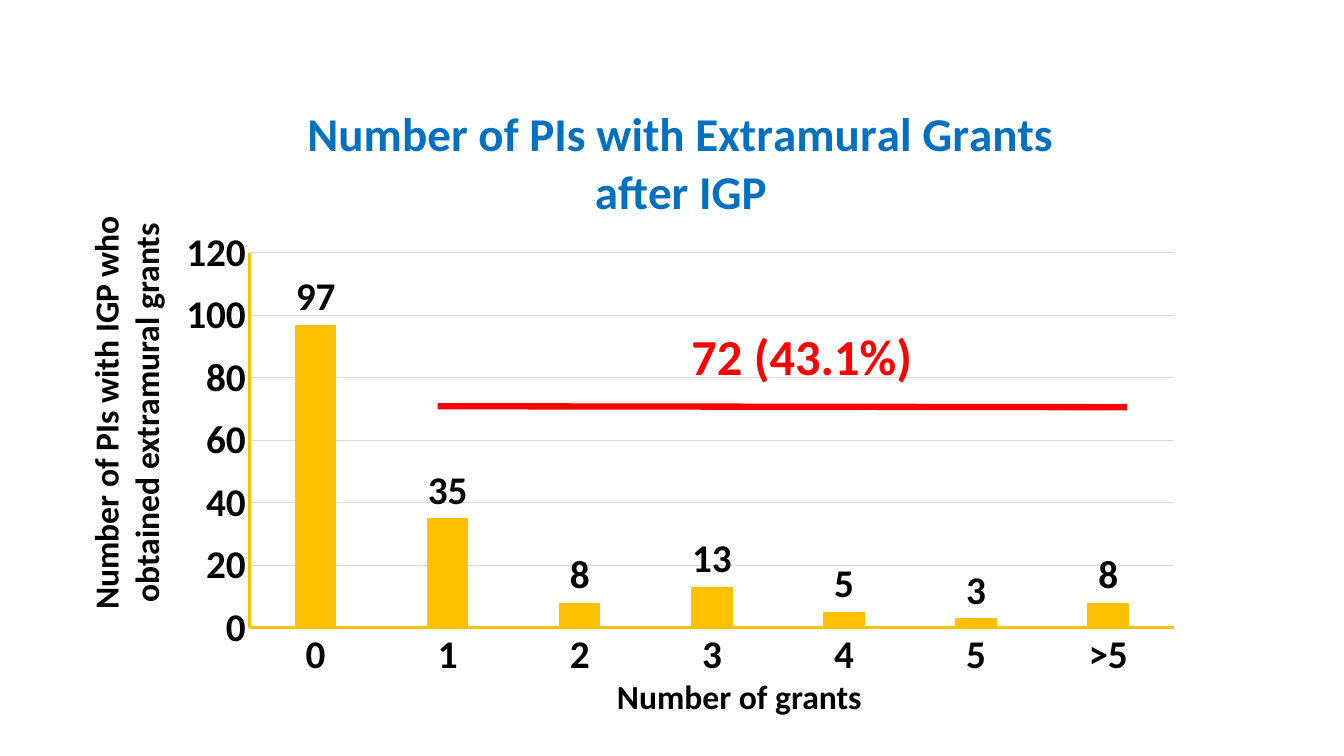
from dataclasses import dataclass

from lxml.etree import SubElement
from pptx import Presentation
from pptx.chart.data import CategoryChartData
from pptx.dml.color import RGBColor
from pptx.enum.chart import XL_CHART_TYPE, XL_LABEL_POSITION, XL_TICK_MARK
from pptx.enum.shapes import MSO_CONNECTOR
from pptx.enum.text import MSO_AUTO_SIZE, PP_ALIGN
from pptx.oxml import parse_xml
from pptx.oxml.ns import nsdecls, qn
from pptx.util import Inches, Pt

GOLD = RGBColor(0xFF, 0xC0, 0x00)
RED = RGBColor(0xFF, 0x00, 0x00)
BLUE = RGBColor(0x00, 0x70, 0xC0)
BLACK = RGBColor(0x00, 0x00, 0x00)
GRAY = RGBColor(0xD9, 0xD9, 0xD9)

GRANTS = {"0": 97, "1": 35, "2": 8, "3": 13, "4": 5, "5": 3, ">5": 8}
TITLE = "Number of PIs with Extramural Grants after IGP"
PLOT = {"x": 0.08, "y": 0.29, "w": 0.9, "h": 0.61}


@dataclass
class Label:
    text: str
    left: float
    top: float
    width: float
    height: float
    size: float = 24
    color: RGBColor = BLACK
    turn: float = 0
    wrap: bool = False


LABELS = [
    Label("72 (43.1%)", 6.76, 3.18, 2.41, 0.71, size=36, color=RED),
    Label("Number of grants", 6.02, 6.66, 2.65, 0.5),
    Label("Number of PIs with IGP who obtained extramural grants",
          -1.32, 3.64, 5.14, 0.91, turn=270, wrap=True),
]


def apply(item, values: dict) -> None:
    for name, value in values.items():
        setattr(item, name, value)


def style(font, size: float, color: RGBColor) -> None:
    apply(font, {"name": "Calibri", "size": Pt(size), "bold": True})
    font.color.rgb = color


def stroke(line, color: RGBColor, width: float) -> None:
    line.color.rgb = color
    line.width = Pt(width)


def place(chart) -> None:
    """Fix the inner plot area as fractions of the chart."""
    area = chart.plots[0]._element.getparent()
    for old in area.findall(qn("c:layout")):
        area.remove(old)
    layout = parse_xml(f"<c:layout {nsdecls('c')}/>")
    box = SubElement(layout, qn("c:manualLayout"))
    parts = {"layoutTarget": "inner", "xMode": "edge", "yMode": "edge", **PLOT}
    for tag, value in parts.items():
        SubElement(box, qn(f"c:{tag}")).set("val", str(value))
    area.insert(0, layout)


def add_bars(slide) -> None:
    data = CategoryChartData()
    data.categories = list(GRANTS)
    data.add_series("Series 1", list(GRANTS.values()))
    chart = slide.shapes.add_chart(
        XL_CHART_TYPE.COLUMN_CLUSTERED, Inches(1.66), Inches(0.74),
        Inches(10.19), Inches(6.1), data).chart
    chart.has_legend = False
    style(chart.font, 28, BLACK)

    # Title
    frame = chart.chart_title.text_frame
    frame.text = TITLE
    style(frame.paragraphs[0].runs[0].font, 33.6, BLUE)
    chart.chart_title.include_in_layout = False

    # Axes
    for axis in (chart.category_axis, chart.value_axis):
        apply(axis, {"major_tick_mark": XL_TICK_MARK.NONE,
                     "minor_tick_mark": XL_TICK_MARK.NONE})
        style(axis.tick_labels.font, 28, BLACK)
        stroke(axis.format.line, GOLD, 2.25)
    apply(chart.value_axis, {"minimum_scale": 0, "maximum_scale": 120,
                             "major_unit": 20, "has_major_gridlines": True})
    stroke(chart.value_axis.major_gridlines.format.line, GRAY, 0.75)

    # Columns and their values
    plot = chart.plots[0]
    apply(plot, {"gap_width": 219, "overlap": -27,
                 "vary_by_categories": False, "has_data_labels": True})
    apply(plot.data_labels, {"show_value": True,
                             "position": XL_LABEL_POSITION.OUTSIDE_END})
    style(plot.data_labels.font, 28, BLACK)
    fill = plot.series[0].format.fill
    fill.solid()
    fill.fore_color.rgb = GOLD
    place(chart)


def add_rule(slide) -> None:
    rule = slide.shapes.add_connector(
        MSO_CONNECTOR.STRAIGHT, Inches(4.34), Inches(4.03),
        Inches(11.18), Inches(4.04))
    stroke(rule.line, RED, 4.5)
    SubElement(rule._element.spPr, qn("a:effectLst"))


def add_label(slide, label: Label) -> None:
    box = slide.shapes.add_textbox(
        Inches(label.left), Inches(label.top),
        Inches(label.width), Inches(label.height))
    box.rotation = label.turn
    frame = box.text_frame
    apply(frame, {"text": label.text, "word_wrap": label.wrap,
                  "auto_size": MSO_AUTO_SIZE.SHAPE_TO_FIT_TEXT})
    line = frame.paragraphs[0]
    if label.wrap:
        line.alignment = PP_ALIGN.CENTER
    style(line.runs[0].font, label.size, label.color)


def main() -> None:
    deck = Presentation()
    apply(deck, {"slide_width": Inches(13.33), "slide_height": Inches(7.5)})
    slide = deck.slides.add_slide(deck.slide_layouts[6])
    add_bars(slide)
    add_rule(slide)
    for label in LABELS:
        add_label(slide, label)
    deck.save("out.pptx")


if __name__ == "__main__":
    main()
